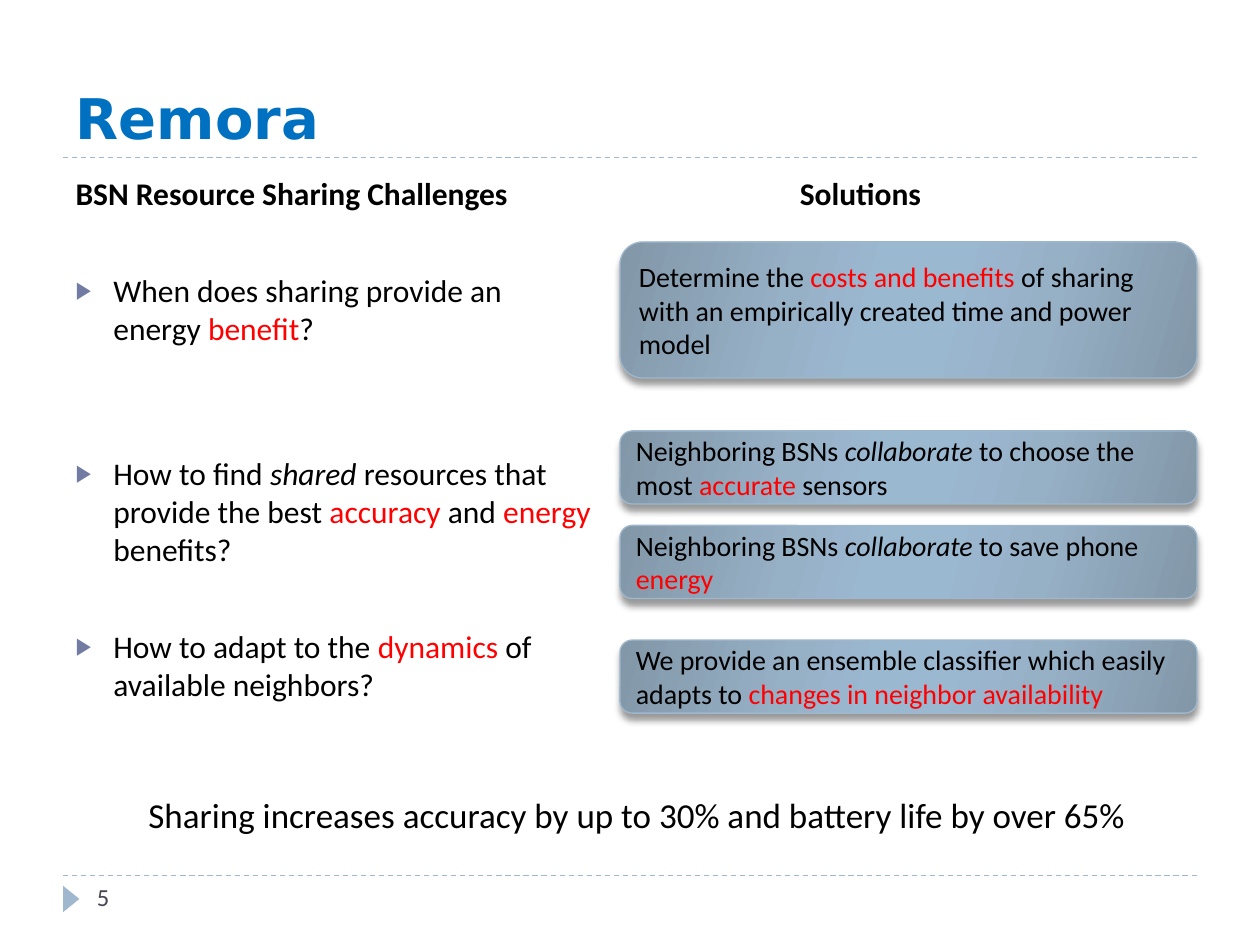
from lxml.etree import SubElement
from pptx import Presentation
from pptx.dml.color import RGBColor
from pptx.enum.dml import MSO_LINE
from pptx.enum.shapes import MSO_CONNECTOR, MSO_SHAPE
from pptx.enum.text import MSO_ANCHOR, MSO_AUTO_SIZE, PP_ALIGN
from pptx.oxml.ns import qn
from pptx.util import Inches, Pt

COLORS = {
    "title": "0070C0",
    "text": "000000",
    "accent": "FF0000",
    "number": "464653",
    "bullet": "727CA3",
    "rule": "9FB8CD",
    "edge": "8297A8",
    "middle": "96B0C6",
    "center": "9BB8D1",
    "shadow": "000000",
}
CARD_STOPS = [(0, "edge"), (30, "middle"), (45, "center"),
              (55, "center"), (73, "middle"), (100, "edge")]
RED = {"color": "accent"}
ITALIC = {"italic": True}

# Space before in points, then the spans of each challenge
CHALLENGES = [
    (34, [("When does sharing provide an energy ", {}), ("benefit", RED), ("?", {})]),
    (61.5, [("How to find ", {}), ("shared", ITALIC),
            (" resources that provide the best ", {}), ("accuracy", RED),
            (" and ", {}), ("energy", RED), (" benefits?", {})]),
    (34, [("How to adapt to the ", {}), ("dynamics", RED),
          (" of available neighbors?", {})]),
]
# Top and height in inches, then the spans of each solution
SOLUTIONS = [
    (1.92, 1.08, [("Determine the ", {}), ("costs and benefits ", RED),
                  ("of sharing with an empirically created time and power model", {})]),
    (3.42, 0.58, [("Neighboring BSNs ", {}), ("collaborate ", ITALIC),
                  ("to choose the most ", {}), ("accurate", RED), (" sensors", {})]),
    (4.17, 0.58, [("Neighboring BSNs ", {}), ("collaborate ", ITALIC),
                  ("to save phone ", {}), ("energy", RED)]),
    (5.08, 0.58, [("We provide an ensemble classifier which easily adapts to ", {}),
                  ("changes in neighbor availability", RED)]),
]


def rgb(name):
    return RGBColor.from_string(COLORS[name])


def add_span(para, text, size=18, font="Calibri", color="text", bold=False, italic=False):
    span = para.add_run()
    span.text = text
    span.font.size = Pt(size)
    span.font.name = font
    span.font.color.rgb = rgb(color)
    span.font.bold = bold
    span.font.italic = italic


def add_spans(para, spans, **base):
    for text, style in spans:
        add_span(para, text, **{**base, **style})


def place(shape, left, top, width, height):
    shape.left, shape.top = Inches(left), Inches(top)
    shape.width, shape.height = Inches(width), Inches(height)


def add_label(page, text, left, top, width, height, wrap=False, **style):
    box = page.shapes.add_textbox(Inches(left), Inches(top), Inches(width), Inches(height))
    box.text_frame.word_wrap = wrap
    add_span(box.text_frame.paragraphs[0], text, **style)


def add_rule(page, top):
    rule = page.shapes.add_connector(
        MSO_CONNECTOR.STRAIGHT, Inches(0.5), Inches(top), Inches(9.5), Inches(top))
    rule.line.color.rgb = rgb("rule")
    rule.line.width = Pt(0.75)
    rule.line.dash_style = MSO_LINE.DASH
    SubElement(rule._element.spPr, qn("a:effectLst"))


def add_page_marker(page):
    marker = page.shapes.add_shape(
        MSO_SHAPE.ISOSCELES_TRIANGLE, Inches(0.46), Inches(7.07), Inches(0.21), Inches(0.13))
    marker.rotation = 90
    marker.shadow.inherit = False
    marker.fill.solid()
    marker.fill.fore_color.rgb = rgb("rule")
    marker.line.fill.background()


def add_color(parent, name):
    return SubElement(parent, qn("a:srgbClr"), val=COLORS[name])


def fill_card(card):
    """Give the card its six-stop gradient and its soft drop shadow."""
    card.fill.gradient()
    gradient = card._element.spPr.find(qn("a:gradFill"))
    stops = gradient.find(qn("a:gsLst"))
    for stop in list(stops):
        stops.remove(stop)
    for percent, name in CARD_STOPS:
        add_color(SubElement(stops, qn("a:gs"), pos=str(percent * 1000)), name)
    gradient.find(qn("a:lin")).set("ang", str(16 * 60000))

    card.shadow.inherit = False
    effects = card._element.spPr.find(qn("a:effectLst"))
    shadow = SubElement(effects, qn("a:outerShdw"), blurRad=str(Pt(4)), dist=str(Pt(3.4)),
                        dir=str(90 * 60000), rotWithShape="0")
    SubElement(add_color(shadow, "shadow"), qn("a:alpha"), val="40000")


def add_card(page, top, height, spans):
    card = page.shapes.add_shape(
        MSO_SHAPE.ROUNDED_RECTANGLE, Inches(4.92), Inches(top), Inches(4.58), Inches(height))
    card.line.color.rgb = rgb("rule")
    card.line.width = Pt(0.75)
    fill_card(card)
    frame = card.text_frame
    frame.word_wrap = True
    frame.vertical_anchor = MSO_ANCHOR.MIDDLE
    para = frame.paragraphs[0]
    para.alignment = PP_ALIGN.LEFT
    add_spans(para, spans, size=16)


def set_bullet(para, symbol=None, indent=0.0):
    properties = para._p.get_or_add_pPr()
    properties.set("marL", str(Inches(indent)))
    properties.set("indent", str(Inches(-indent)))
    if symbol is None:
        SubElement(properties, qn("a:buNone"))
        return
    add_color(SubElement(properties, qn("a:buClr")), "bullet")
    SubElement(properties, qn("a:buSzPct"), val="76000")
    SubElement(properties, qn("a:buChar"), char=symbol)


def fill_title(title):
    place(title, 0.5, 0.17, 9, 1.08)
    frame = title.text_frame
    frame.auto_size = MSO_AUTO_SIZE.NONE
    frame.vertical_anchor = MSO_ANCHOR.BOTTOM
    para = frame.paragraphs[0]
    para.alignment = PP_ALIGN.LEFT
    add_span(para, "Remora", size=32, font="DejaVu Sans", color="title", bold=True)


def fill_challenges(body):
    place(body, 0.5, 1.33, 4.33, 5.4)
    frame = body.text_frame
    frame.auto_size = MSO_AUTO_SIZE.NONE
    heading = frame.paragraphs[0]
    heading.space_before = Pt(6)
    set_bullet(heading)
    add_span(heading, "BSN Resource Sharing Challenges", bold=True)
    for gap, spans in CHALLENGES:
        para = frame.add_paragraph()
        para.space_before = Pt(gap)
        set_bullet(para, "▶", indent=0.3)
        add_spans(para, spans)


def main():
    deck = Presentation()
    deck.slide_width, deck.slide_height = Inches(10), Inches(7.5)
    page = deck.slides.add_slide(deck.slide_layouts[1])

    fill_title(page.shapes.title)
    fill_challenges(page.placeholders[1])
    for top in (1.25, 6.95):
        add_rule(page, top)
    add_page_marker(page)
    add_label(page, "5", 0.67, 6.95, 2.17, 0.4, wrap=True, size=14, color="number")
    for top, height, spans in SOLUTIONS:
        add_card(page, top, height, spans)
    add_label(page, "Solutions", 6.25, 1.33, 1.3, 0.4, bold=True)
    add_label(page, "Sharing increases accuracy by up to 30% and battery life by over 65%",
              1.08, 6.25, 8.04, 0.44, size=20)
    deck.save("out.pptx")


if __name__ == "__main__":
    main()
